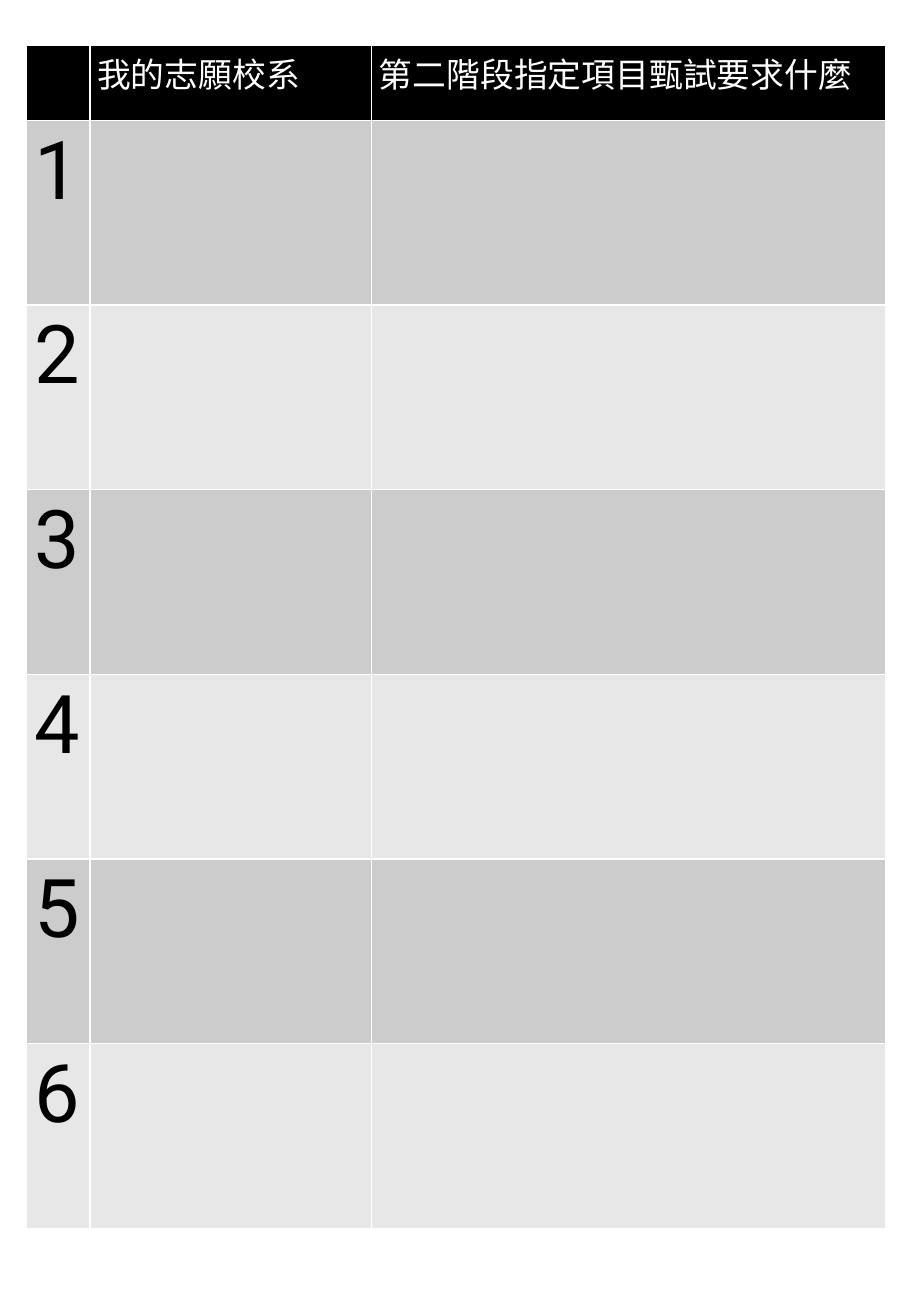
from dataclasses import dataclass

from lxml import etree
from pptx import Presentation
from pptx.dml.color import RGBColor
from pptx.oxml import ns
from pptx.util import Inches, Pt


@dataclass
class Theme:
    font: str = "Roboto"
    black: str = "000000"
    white: str = "FFFFFF"
    bands: tuple = ("CCCCCC", "E7E7E7")
    head: int = 20
    digit: int = 48
    rule: int = 1


theme = Theme()


def edge(cell):
    """Draw a thin white border on all four sides of the cell."""
    props = cell._tc.get_or_add_tcPr()
    for side in ("lnL", "lnR", "lnT", "lnB"):
        line = etree.SubElement(props, ns.qn(f"a:{side}"), w=str(Pt(theme.rule)))
        fill = etree.SubElement(line, ns.qn("a:solidFill"))
        etree.SubElement(fill, ns.qn("a:srgbClr"), val=theme.white)


deck = Presentation()
deck.slide_width, deck.slide_height = Inches(7.5), Inches(10.83)
slide = deck.slides.add_slide(deck.slide_layouts[6])

rows = [["", "我的志願校系", "第二階段指定項目甄試要求什麼"]]
rows += [[str(rank), "", ""] for rank in range(1, 7)]
widths = [0.52, 2.32, 4.23]
heights = [0.62] + [1.52] * 6

frame = slide.shapes.add_table(
    len(rows), len(widths), Inches(0.22), Inches(0.37),
    Inches(sum(widths)), Inches(sum(heights)))
table = frame.table
for col, width in zip(table.columns, widths):
    col.width = Inches(width)
for row, height in zip(table.rows, heights):
    row.height = Inches(height)

margins = {"margin_left": 0.06, "margin_right": 0.06,
           "margin_top": 0.03, "margin_bottom": 0.03}
for r, words in enumerate(rows):
    if r == 0:
        back, ink, size = theme.black, theme.white, theme.head
    else:
        back, ink, size = theme.bands[(r - 1) % 2], theme.black, theme.digit
    for c, word in enumerate(words):
        cell = table.cell(r, c)
        edge(cell)
        cell.fill.solid()
        cell.fill.fore_color.rgb = RGBColor.from_string(back)
        for name, gap in margins.items():
            setattr(cell, name, Inches(gap))
        if word:
            run = cell.text_frame.paragraphs[0].add_run()
            run.text = word
            style = {"name": theme.font, "size": Pt(size), "bold": False}
            for name, value in style.items():
                setattr(run.font, name, value)
            run.font.color.rgb = RGBColor.from_string(ink)

deck.save("out.pptx")
